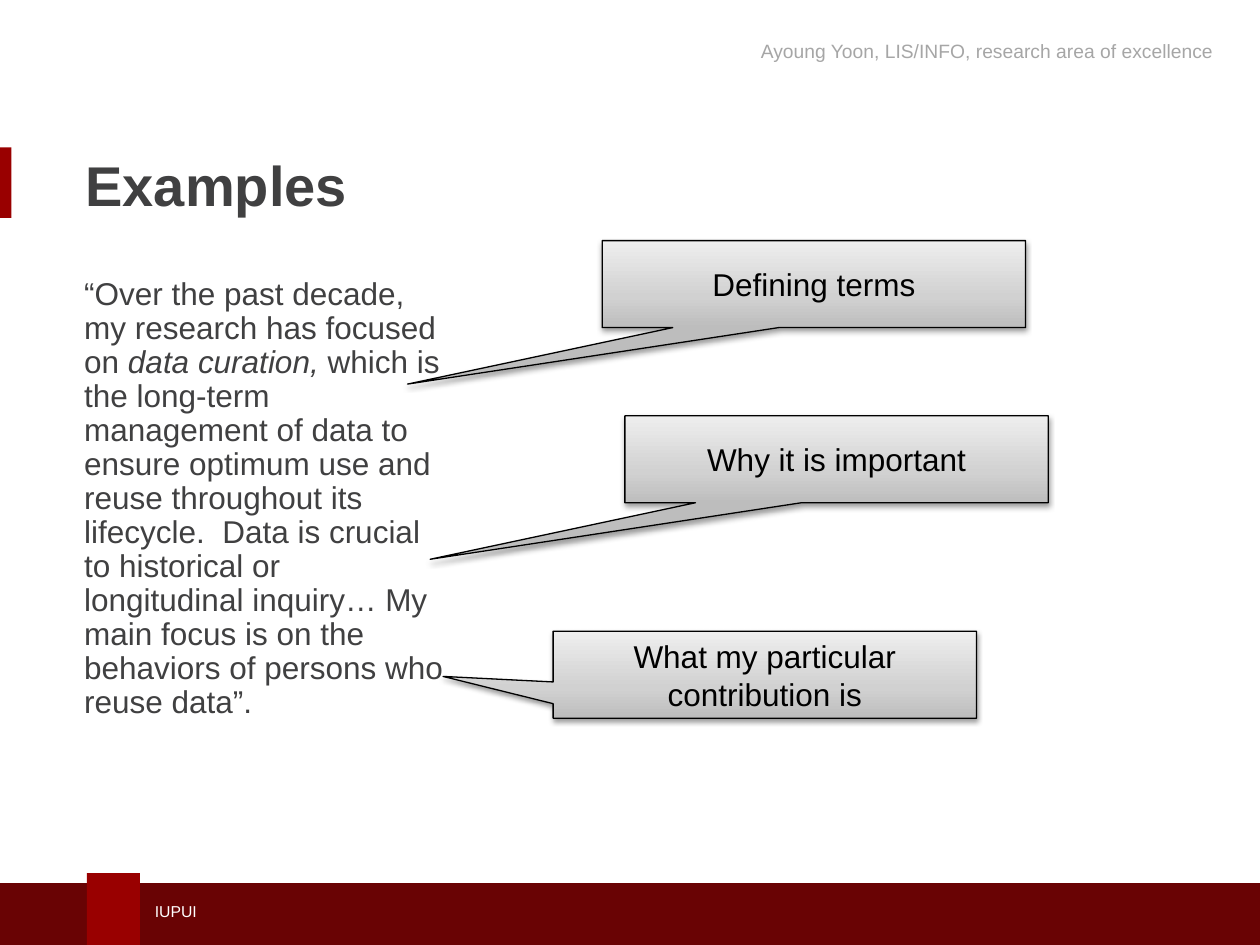
from dataclasses import dataclass

from lxml import etree
from pptx import Presentation
from pptx.dml.color import RGBColor
from pptx.enum.shapes import MSO_SHAPE
from pptx.enum.text import MSO_ANCHOR, PP_ALIGN
from pptx.oxml.ns import qn
from pptx.util import Inches, Pt

RECTANGLE = MSO_SHAPE.RECTANGLE
CALLOUT = MSO_SHAPE.RECTANGULAR_CALLOUT
TOP, MIDDLE = MSO_ANCHOR.TOP, MSO_ANCHOR.MIDDLE
LEFT, CENTER, RIGHT = PP_ALIGN.LEFT, PP_ALIGN.CENTER, PP_ALIGN.RIGHT


@dataclass(frozen=True)
class Theme:
    font: str = "Arial"
    crimson: str = "990000"
    maroon: str = "690304"
    ink: str = "404041"
    muted: str = "A6A6A6"
    white: str = "FFFFFF"
    black: str = "000000"
    # Callout gradient, from bottom to top: percent and colour
    greys: tuple = ((0, "BDBDBD"), (35, "D1D1D1"), (100, "EEEEEE"))
    title_size: int = 32
    body_size: int = 18
    header_size: int = 11
    footer_size: int = 9


THEME = Theme()
CALLOUT_SIZE = (3.36, 0.69)

QUOTE = (
    ("“Over the past decade, my research has focused on ", False),
    ("data curation, ", True),
    ("which is the long-term management of data to ensure optimum use and "
     "reuse throughout its lifecycle.  Data is crucial to historical or "
     "longitudinal inquiry… My main focus is on the behaviors of persons "
     "who reuse data”.", False),
)

# Label, left and top, pointer tip as shares of the callout's size
CALLOUTS = (
    ("Defining terms", (4.78, 1.91), (-0.96, 1.15)),
    ("Why it is important", (4.96, 3.3), (-0.96, 1.15)),
    ("What my particular contribution is", (4.39, 5.01), (-0.76, 0.02)),
)


def inches(*lengths):
    return [Inches(length) for length in lengths]


def write(shape, runs, size, color, align=LEFT, anchor=TOP, bold=False):
    """Fill a shape with one paragraph of (text, italic) runs."""
    frame = shape.text_frame
    frame.word_wrap = True
    frame.vertical_anchor = anchor
    paragraph = frame.paragraphs[0]
    paragraph.alignment = align
    font = paragraph.font
    font.name, font.size, font.bold = THEME.font, Pt(size), bold
    font.color.rgb = RGBColor.from_string(color)
    for text, italic in runs:
        run = paragraph.add_run()
        run.text = text
        if italic:
            run.font.italic = True
    return paragraph


def add_text(slide, box, runs, size, color, **style):
    textbox = slide.shapes.add_textbox(*inches(*box))
    return write(textbox, runs, size, color, **style)


def add_block(slide, box, color):
    block = slide.shapes.add_shape(RECTANGLE, *inches(*box))
    block.shadow.inherit = False
    block.fill.solid()
    block.fill.fore_color.rgb = RGBColor.from_string(color)
    block.line.fill.background()


def add_color(parent, color):
    return etree.SubElement(parent, qn("a:srgbClr"), val=color)


def shade(shape):
    """Give a shape the grey gradient and a soft shadow below it."""
    shape.fill.gradient()
    shape.fill.gradient_angle = 90
    properties = shape._element.spPr
    stops = properties.find(qn("a:gradFill")).find(qn("a:gsLst"))
    for stop in list(stops):
        stops.remove(stop)
    for percent, color in THEME.greys:
        stop = etree.SubElement(stops, qn("a:gs"), pos=str(percent * 1000))
        add_color(stop, color)

    shape.shadow.inherit = False
    shadow = etree.SubElement(
        properties.find(qn("a:effectLst")), qn("a:outerShdw"),
        blurRad=str(Pt(3.1)), dist=str(Pt(1.6)), dir="5400000",
        rotWithShape="0")
    etree.SubElement(add_color(shadow, THEME.black), qn("a:alpha"), val="38000")


def add_callout(slide, label, corner, tip):
    callout = slide.shapes.add_shape(CALLOUT, *inches(*corner, *CALLOUT_SIZE))
    callout.adjustments[0], callout.adjustments[1] = tip
    callout.line.color.rgb = RGBColor.from_string(THEME.black)
    callout.line.width = Pt(0.75)
    shade(callout)
    write(callout, [(label, False)], THEME.body_size, THEME.black,
          align=CENTER, anchor=MIDDLE)


def main():
    deck = Presentation()
    deck.slide_width, deck.slide_height = inches(10, 7.5)
    slide = deck.slides.add_slide(deck.slide_layouts[6])

    # Title marker and footer band
    add_block(slide, (0, 1.17, 0.09, 0.56), THEME.crimson)
    add_block(slide, (-0.03, 7.01, 10.09, 0.5), THEME.maroon)
    add_block(slide, (0.69, 6.93, 0.42, 0.58), THEME.crimson)
    add_text(slide, (1.13, 7.11, 3.95, 0.25), [("IUPUI", False)],
             THEME.footer_size, THEME.white, anchor=MIDDLE)

    # Title and header
    add_text(slide, (0.58, 1.11, 8.75, 0.7), [("Examples", False)],
             THEME.title_size, THEME.ink, anchor=MIDDLE, bold=True)
    add_text(slide, (5.68, 0.26, 4.05, 0.37),
             [("Ayoung Yoon, LIS/INFO, research area of excellence", False)],
             THEME.header_size, THEME.muted, align=RIGHT)

    # Quoted statement with its annotations
    quote = add_text(slide, (0.57, 2.16, 3.07, 3.85), QUOTE,
                     THEME.body_size, THEME.ink)
    quote.line_spacing = 0.9
    for label, corner, tip in CALLOUTS:
        add_callout(slide, label, corner, tip)

    deck.save("out.pptx")


if __name__ == "__main__":
    main()
